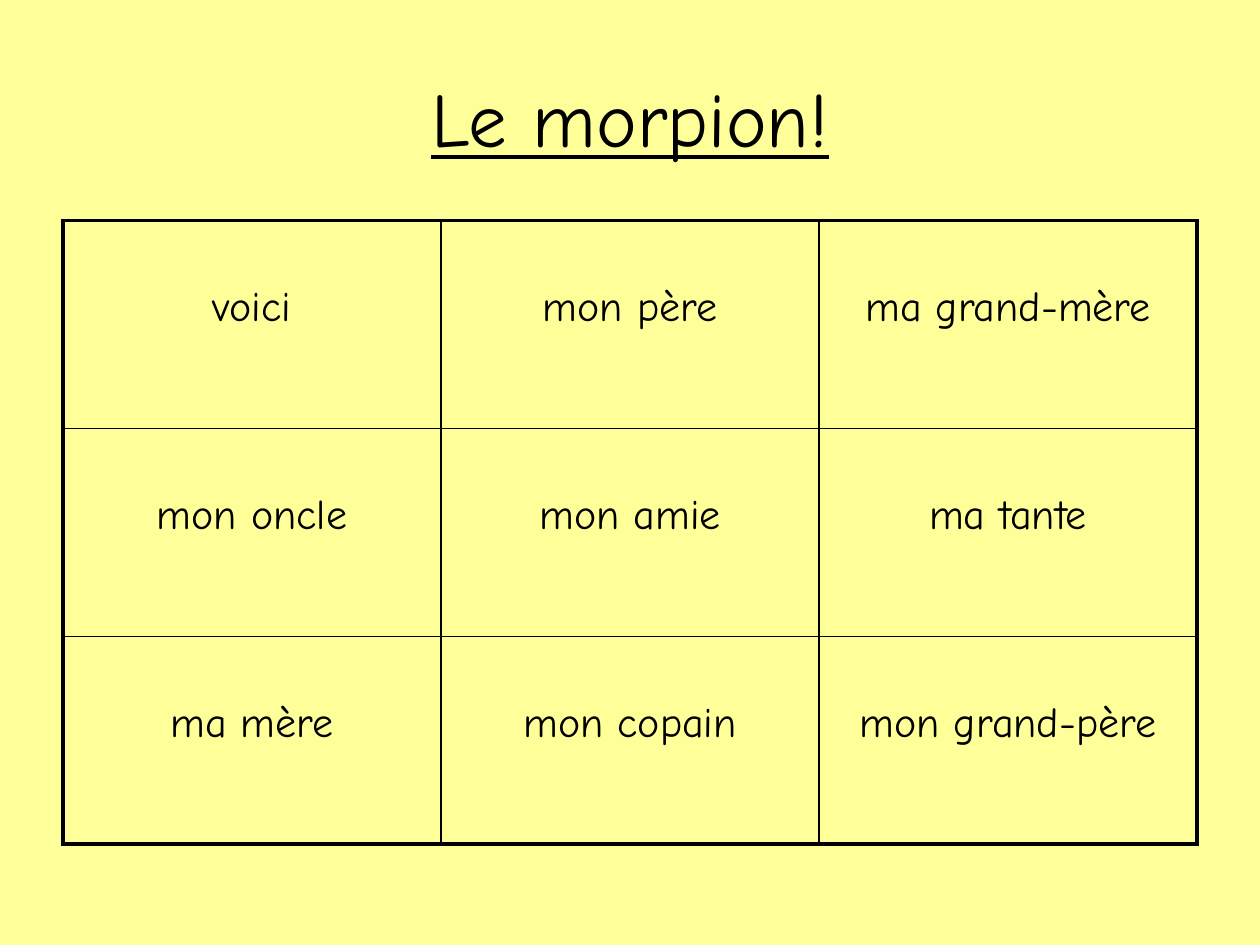
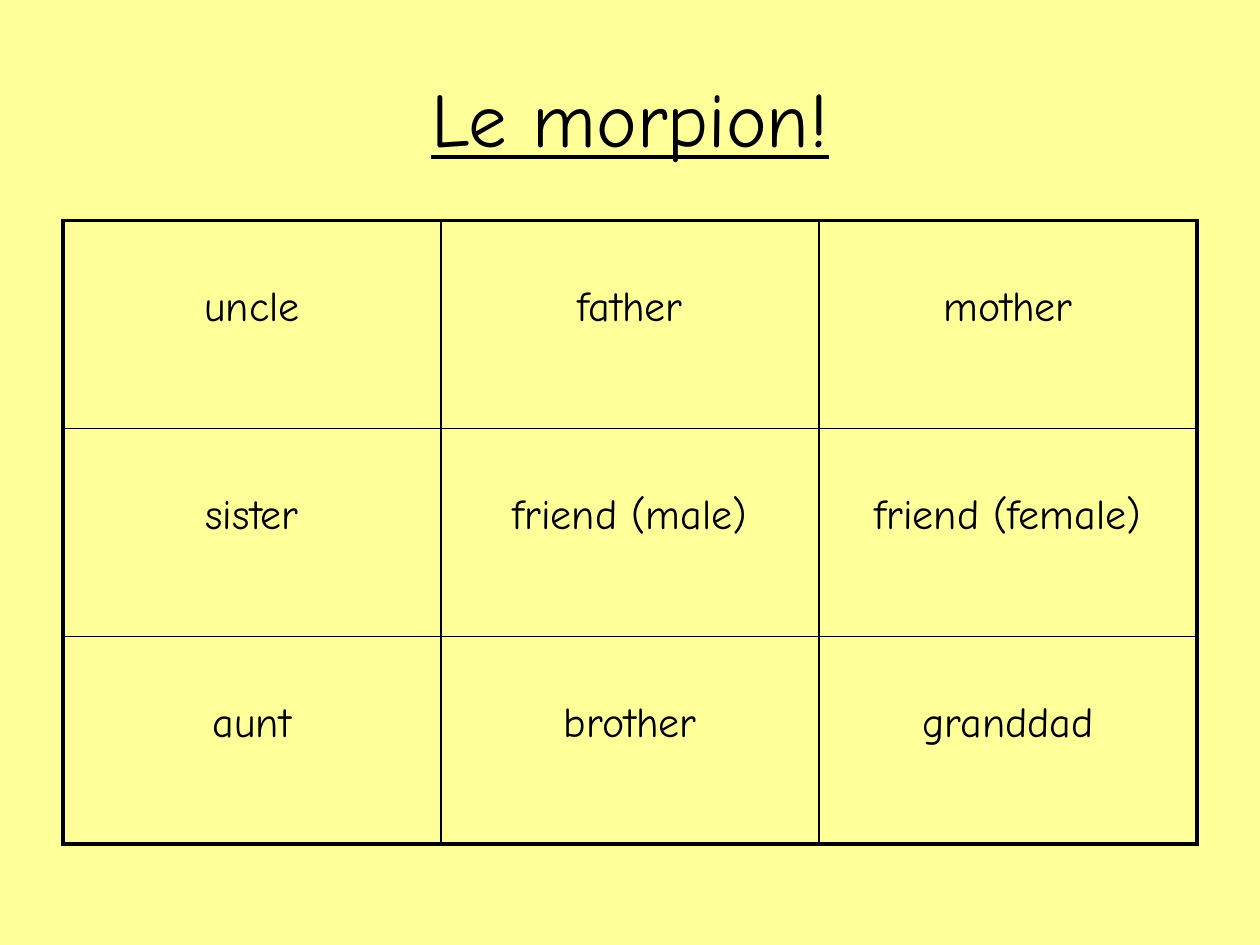
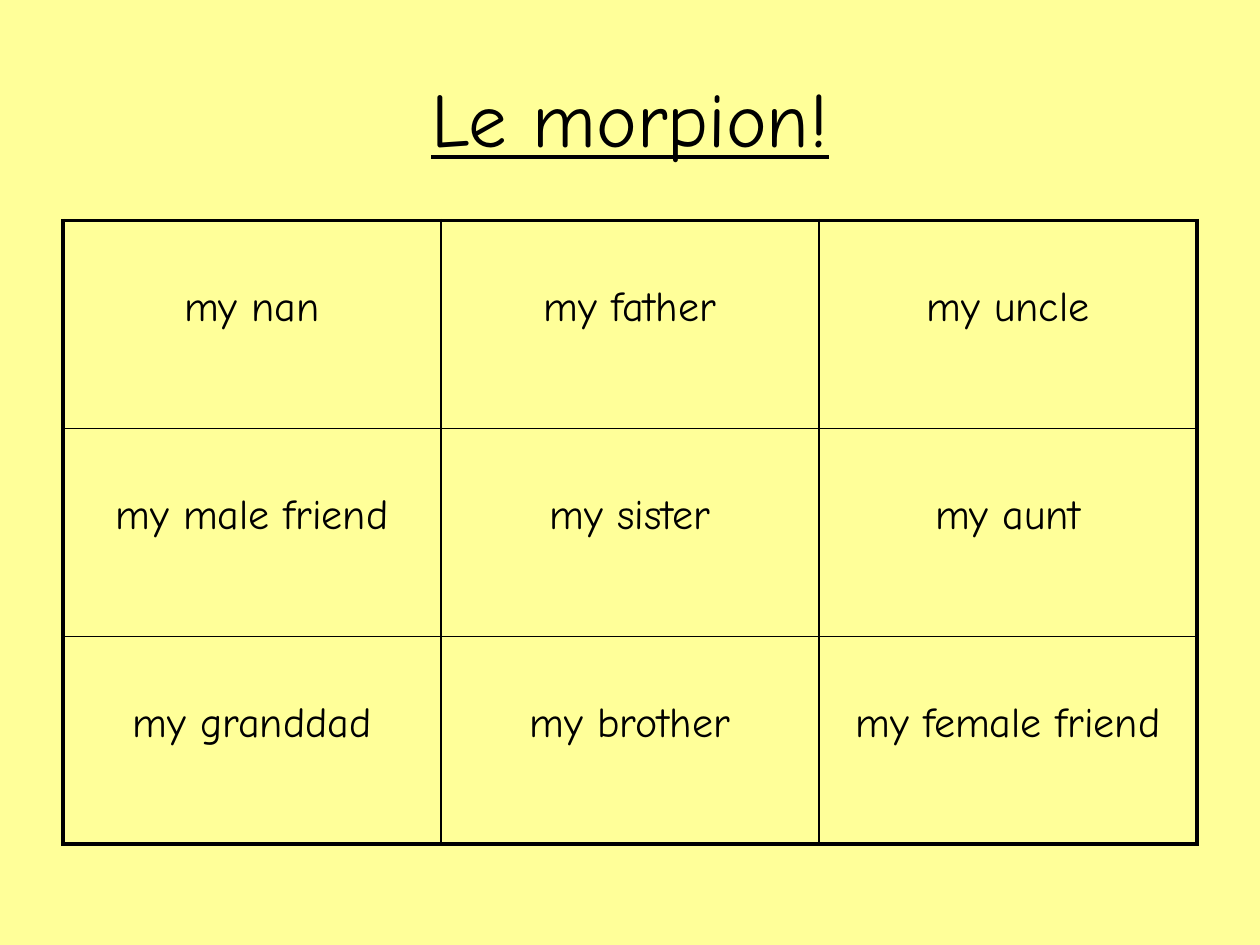
"""Build three noughts-and-crosses grids of family words."""
from lxml.etree import SubElement
from pptx import Presentation
from pptx.dml.color import RGBColor
from pptx.enum.text import MSO_ANCHOR, PP_ALIGN
from pptx.oxml.ns import qn
from pptx.util import Pt

FONT = "Comic Neue"
PAPER, INK = "FFFF99", "000000"
THICK, THIN = 2.25, 1
LEFT, WIDTH = 36, 648
SIDE = 3
GRIDS = [
    [["voici", "mon père", "ma grand-mère"],
     ["mon oncle", "mon amie", "ma tante"],
     ["ma mère", "mon copain", "mon grand-père"]],
    [["uncle", "father", "mother"],
     ["sister", "friend (male)", "friend (female)"],
     ["aunt", "brother", "granddad"]],
    [["my nan", "my father", "my uncle"],
     ["my male friend", "my sister", "my aunt"],
     ["my granddad", "my brother", "my female friend"]],
]


def paint(color, code):
    color.rgb = RGBColor.from_string(code)


def write(frame, text, size, under=False):
    para = frame.paragraphs[0]
    para.alignment = PP_ALIGN.CENTER
    run = para.add_run()
    run.text = text
    run.font.name = FONT
    run.font.size = Pt(size)
    run.font.underline = under
    paint(run.font.color, INK)


prs = Presentation()
prs.slide_width, prs.slide_height = Pt(720), Pt(540)
back = prs.slide_master.background.fill
back.solid()
paint(back.fore_color, PAPER)

for grid in GRIDS:
    slide = prs.slides.add_slide(prs.slide_layouts[6])

    title = slide.shapes.add_textbox(Pt(LEFT), Pt(21.6), Pt(WIDTH), Pt(90)).text_frame
    title.word_wrap = True
    title.vertical_anchor = MSO_ANCHOR.MIDDLE
    write(title, "Le morpion!", 44, under=True)

    table = slide.shapes.add_table(SIDE, SIDE, Pt(LEFT), Pt(126), Pt(WIDTH), Pt(356.4)).table
    table.first_row = table.horz_banding = False
    for row, words in enumerate(grid):
        for col, word in enumerate(words):
            cell = table.cell(row, col)
            cell.margin_top = Pt(36)
            write(cell.text_frame, word, 24)
            props = cell._tc.get_or_add_tcPr()
            edges = {"L": col == 0, "R": col == SIDE - 1,
                     "T": row == 0, "B": row == SIDE - 1}
            for edge, outer in edges.items():
                width = Pt(THICK if outer else THIN)
                line = SubElement(props, qn(f"a:ln{edge}"), w=str(width))
                fill = SubElement(line, qn("a:solidFill"))
                SubElement(fill, qn("a:srgbClr"), val=INK)
            cell.fill.background()

prs.save("out.pptx")
